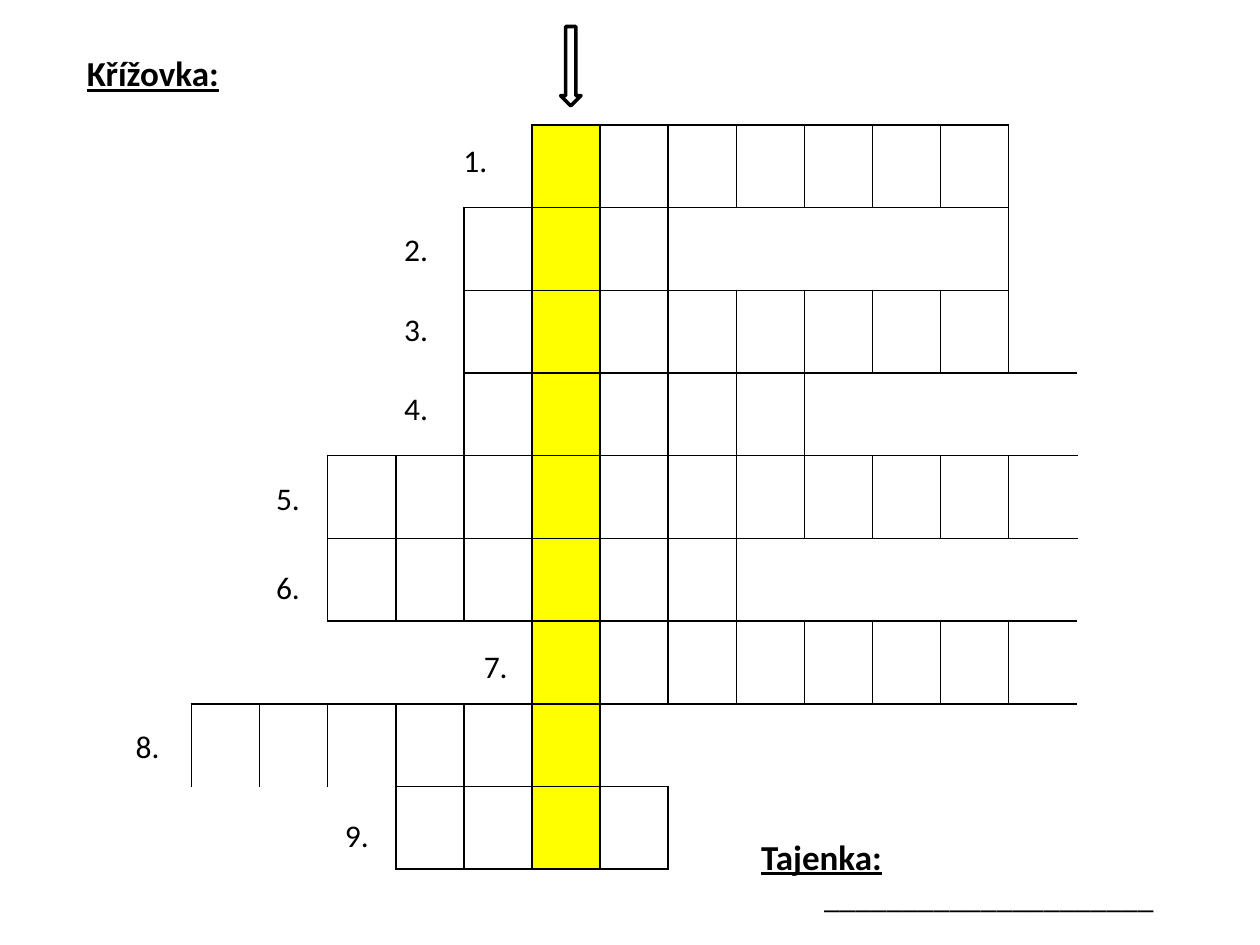
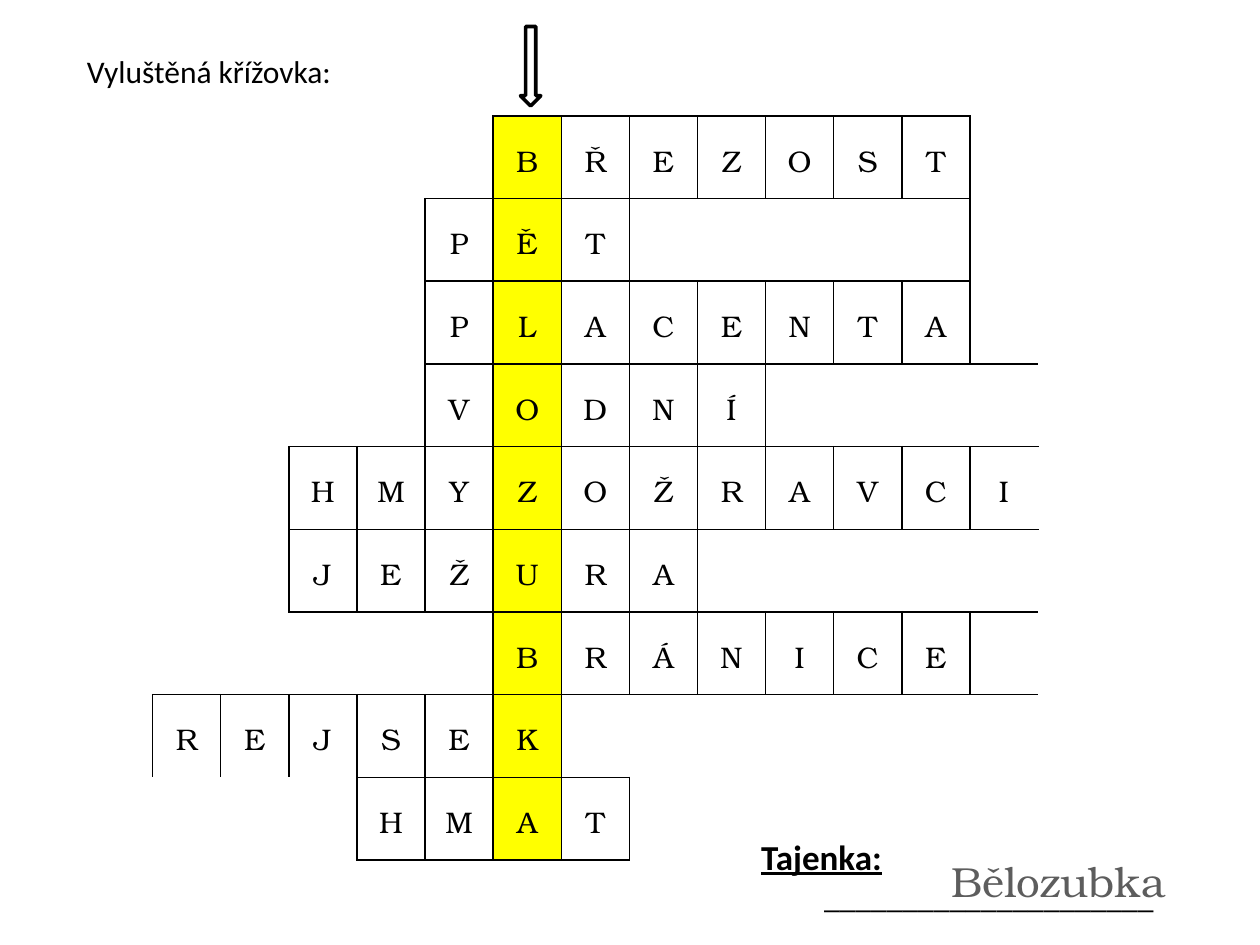
from itertools import product
from lxml.etree import SubElement
from pptx import Presentation
from pptx.dml.color import RGBColor
from pptx.enum.shapes import MSO_SHAPE
from pptx.enum.text import MSO_ANCHOR, MSO_AUTO_SIZE, PP_ALIGN
from pptx.oxml import parse_xml
from pptx.oxml.ns import nsdecls, qn
from pptx.util import Inches, Pt

COLORS = {"ink": "000000", "paper": "FFFFFF", "highlight": "FFFF00", "answer": "5D5D5D"}
SANS, SERIF = "Calibri", "TeX Gyre Bonum"
HEADING = {"name": SANS, "size": Pt(20), "bold": True, "underline": True}
PLAIN = {"name": SANS, "size": Pt(18), "bold": False, "underline": False}
LETTER = {"name": SERIF, "size": Pt(17), "bold": False}
ANSWER = {"name": SERIF, "size": Pt(24)}

# Grid: every place and size below is counted in crossword columns and rows
COLUMNS, ROWS = 15, 9
COLUMN, ROW = Inches(8.11 / COLUMNS), Inches(5.91 / ROWS)
KEY_COLUMN = 6

# Each word with the place of its key letter
WORDS = [("BŘEZOST", 0), ("PĚT", 1), ("PLACENTA", 1), ("VODNÍ", 1), ("HMYZOŽRAVCI", 3),
         ("JEŽURA", 3), ("BRÁNICE", 0), ("REJSEK", 5), ("HMAT", 2)]

# Blank areas: row, column, rows, columns, visible edges
BLANKS = [
    (0, 0, 1, 6, "R"), (0, 13, 2, 1, "L"), (0, 14, 2, 1, ""),
    (1, 0, 3, 5, "R"), (1, 8, 1, 5, "LTB"), (2, 13, 1, 2, "L"),
    (3, 10, 1, 4, "LTB"), (3, 14, 6, 1, ""), (4, 0, 1, 3, "R"),
    (5, 0, 1, 3, "R"), (5, 9, 1, 5, "LTB"), (6, 0, 1, 3, ""),
    (6, 3, 1, 3, "TRB"), (6, 13, 1, 1, "L"), (7, 0, 1, 1, "R"),
    (7, 7, 1, 3, "LTB"), (7, 10, 1, 1, "T"), (7, 11, 1, 3, "T"),
    (8, 0, 1, 4, "R"), (8, 8, 1, 6, "L"),
]

# Left and top of the clue numbers
CLUES = [(6.62, 1.63), (5.75, 2.71), (5.75, 3.67), (5.75, 4.63), (3.87, 5.71),
         (3.87, 6.79), (6.92, 7.75), (1.81, 8.71), (4.88, 9.79)]

# Visible edges of every cell
edges = {}
for row, (word, key) in enumerate(WORDS):
    for column in range(KEY_COLUMN - key, KEY_COLUMN - key + len(word)):
        edges[row, column] = "LRTB"
for top, left, height, width, visible in BLANKS:
    for row, column in product(range(top, top + height), range(left, left + width)):
        border = {"L": column == left, "R": column == left + width - 1,
                  "T": row == top, "B": row == top + height - 1}
        edges[row, column] = "".join(side for side in visible if border[side])


def grid_box(left, top, width, height):
    return [round(left * COLUMN), round(top * ROW), round(width * COLUMN), round(height * ROW)]


def write(shape, lines, color="ink", align=PP_ALIGN.LEFT):
    frame = shape.text_frame
    frame.word_wrap = False
    frame.auto_size = MSO_AUTO_SIZE.SHAPE_TO_FIT_TEXT
    frame.vertical_anchor = MSO_ANCHOR.TOP
    for index, (text, font_format) in enumerate(lines):
        paragraph = frame.add_paragraph() if index else frame.paragraphs[0]
        paragraph.alignment = align
        run = paragraph.add_run()
        run.text = text
        run.font.color.rgb = RGBColor.from_string(COLORS[color])
        for name, value in font_format.items():
            setattr(run.font, name, value)


presentation = Presentation()
presentation.slide_width, presentation.slide_height = Inches(10), Inches(7.5)

# Heading, its format and width, table corner, arrow column, solved or not
PAGES = [
    ("Křížovka:", HEADING, 2.33, (1.81, 1.51), 8.23, False),
    ("Vyluštěná křížovka:", PLAIN, 4, (1.24, 1.4), 7.64, True),
]

for heading, heading_format, heading_width, corner, arrow_left, solved in PAGES:
    slide = presentation.slides.add_slide(presentation.slide_layouts[5])

    # Heading
    title = slide.shapes.title
    title.left, title.top, title.width, title.height = grid_box(1.09, 0.55, heading_width, 0.64)
    write(title, [(heading, heading_format)])

    # Crossword table
    table = slide.shapes.add_table(ROWS, COLUMNS, *grid_box(*corner, COLUMNS, ROWS)).table
    table.first_row = table.horz_banding = False
    for column in table.columns:
        column.width = COLUMN
    for row in table.rows:
        row.height = ROW
    for top, left, height, width, visible in BLANKS:
        if height * width > 1:
            table.cell(top, left).merge(table.cell(top + height - 1, left + width - 1))

    # Cell fills and borders
    for (row, column), visible in edges.items():
        cell = table.cell(row, column)
        if column == KEY_COLUMN:
            cell.fill.solid()
            cell.fill.fore_color.rgb = RGBColor.from_string(COLORS["highlight"])
        else:
            cell.fill.background()
        for index, side in enumerate("LRTB"):
            thick = side == "T" and row == 6 and 9 <= column <= 12
            line = parse_xml(f'<a:ln{side} {nsdecls("a")} w="{Pt(1.5 if thick else 1)}"/>')
            if side in visible:
                fill = SubElement(line, qn("a:solidFill"))
                SubElement(fill, qn("a:srgbClr"), val=COLORS["ink"])
            else:
                SubElement(line, qn("a:noFill"))
            cell._tc.get_or_add_tcPr().insert(index, line)

    # Letters of the solution
    if solved:
        for row, (word, key) in enumerate(WORDS):
            for column, letter in enumerate(word, KEY_COLUMN - key):
                cell = table.cell(row, column)
                cell.vertical_anchor = MSO_ANCHOR.MIDDLE
                cell.margin_left = cell.margin_right = Inches(0.05)
                cell.margin_top = cell.margin_bottom = 0
                paragraph = cell.text_frame.paragraphs[0]
                paragraph.alignment = PP_ALIGN.CENTER
                paragraph.line_spacing, paragraph.space_after = 1.15, Pt(10)
                run = paragraph.add_run()
                run.text = letter
                run.font.color.rgb = RGBColor.from_string(COLORS["ink"])
                for name, value in LETTER.items():
                    setattr(run.font, name, value)

    # Clue numbers
    if not solved:
        for number, (left, top) in enumerate(CLUES, 1):
            clue = slide.shapes.add_textbox(*grid_box(left, top, 0.72, 0.61))
            write(clue, [(f"{number}.", PLAIN)])

    # Arrow above the key column
    arrow = slide.shapes.add_shape(MSO_SHAPE.DOWN_ARROW, *grid_box(arrow_left, 0.32, 0.3, 0.96))
    arrow.shadow.inherit = False
    arrow.fill.solid()
    arrow.fill.fore_color.rgb = RGBColor.from_string(COLORS["paper"])
    arrow.line.color.rgb = RGBColor.from_string(COLORS["ink"])
    arrow.line.width = Pt(2)

    # Key word line
    key_line = slide.shapes.add_textbox(*grid_box(10.99, 10.02, 7.14, 1.13))
    write(key_line, [("Tajenka:", HEADING), ("\t" + "_" * 21, PLAIN)])
    if solved:
        answer = slide.shapes.add_textbox(*grid_box(13.76, 10.26, 3.55, 0.76))
        write(answer, [("Bělozubka", ANSWER)], "answer", PP_ALIGN.CENTER)

presentation.save("out.pptx")
